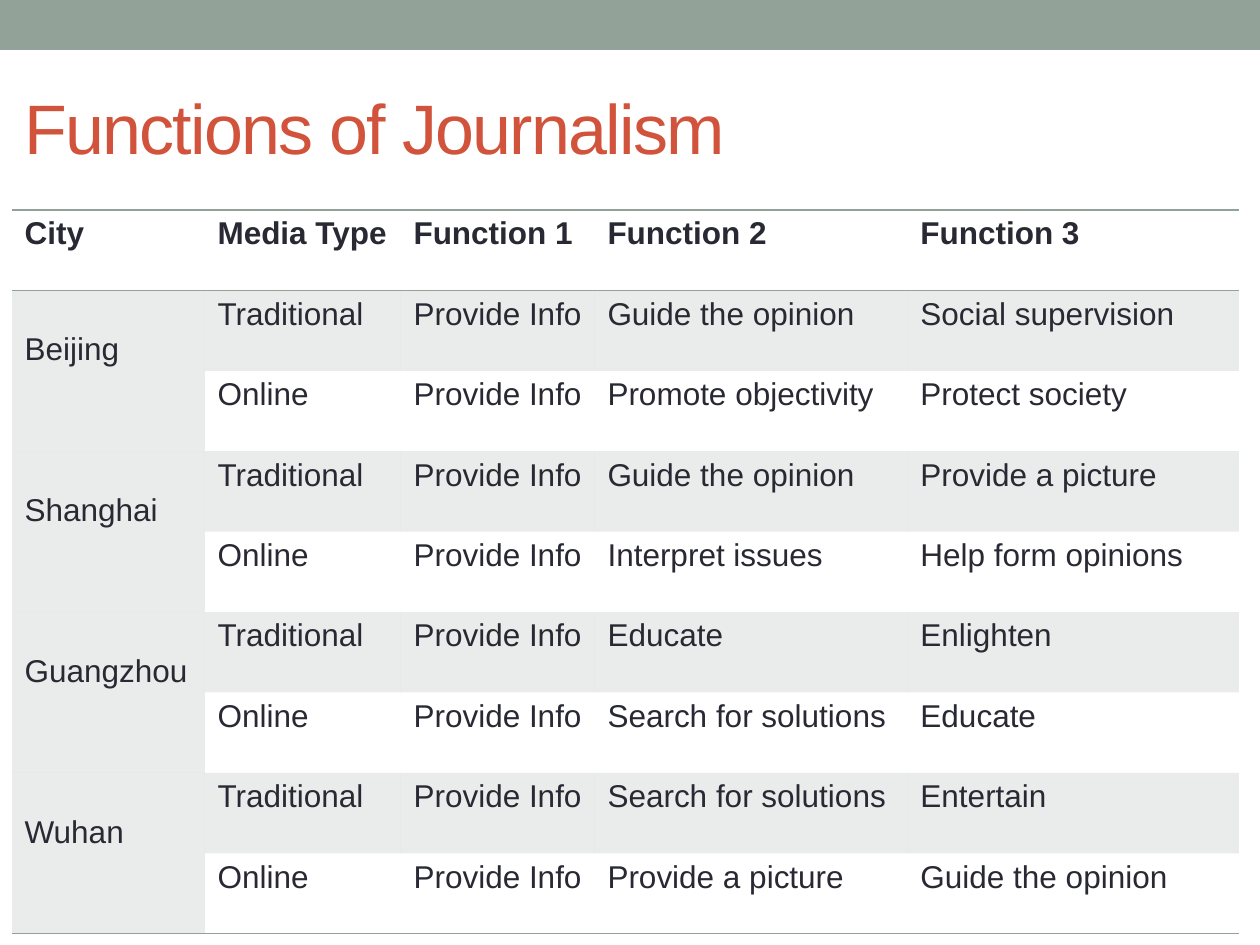
from lxml import etree
from pptx import Presentation
from pptx.dml.color import RGBColor
from pptx.enum.shapes import MSO_SHAPE
from pptx.enum.text import MSO_ANCHOR
from pptx.oxml.ns import qn
from pptx.util import Emu, Pt

RECTANGLE = MSO_SHAPE.RECTANGLE
MIDDLE = MSO_ANCHOR.MIDDLE
SAGE = RGBColor(0x93, 0xA2, 0x99)
RUST = RGBColor(0xD2, 0x53, 0x3C)
INK = RGBColor(0x29, 0x29, 0x34)
FONT = "Arial"
NO_STYLE_NO_GRID = "{2D5ABB26-0587-4C30-8999-92F81FD0307C}"

HEADER = ["City", "Media Type", "Function 1", "Function 2", "Function 3"]
CITIES = ["Beijing", "Shanghai", "Guangzhou", "Wuhan"]
MEDIA_TYPES = ["Traditional", "Online"]
LATER_FUNCTIONS = [
    ["Guide the opinion", "Social supervision"],
    ["Promote objectivity", "Protect society"],
    ["Guide the opinion", "Provide a picture"],
    ["Interpret issues", "Help form opinions"],
    ["Educate", "Enlighten"],
    ["Search for solutions", "Educate"],
    ["Search for solutions", "Entertain"],
    ["Provide a picture", "Guide the opinion"],
]
COLUMN_WIDTHS = [193, 196, 194, 313, 331]
TABLE_HEIGHT = 724
CITY_TOP_MARGIN = 42  # one blank line above the city name


def px(length):
    return Emu(round(length * 914400 / 126))


def add_run(paragraph, text, size, color, bold=False):
    run = paragraph.add_run()
    run.text = text
    run.font.name = FONT
    run.font.size = Pt(size)
    run.font.bold = bold
    run.font.color.rgb = color
    return run


presentation = Presentation()
presentation.slide_width = px(1260)
presentation.slide_height = px(945)
slide = presentation.slides.add_slide(presentation.slide_layouts[6])

# Top band
band = slide.shapes.add_shape(RECTANGLE, px(0), px(0), px(1260), px(50))
band.shadow.inherit = False
band.fill.solid()
band.fill.fore_color.rgb = SAGE
band.line.fill.background()

# Title
title = slide.shapes.add_textbox(px(12), px(59), px(1134), px(136))
title.text_frame.word_wrap = True
title.text_frame.vertical_anchor = MIDDLE
title_run = add_run(title.text_frame.paragraphs[0], "Functions of Journalism", 40, RUST)
title_run.font._element.set("spc", "-100")

# Table grid
rows = [HEADER]
for index, functions in enumerate(LATER_FUNCTIONS):
    city = CITIES[index // 2] if index % 2 == 0 else ""
    rows.append([city, MEDIA_TYPES[index % 2], "Provide Info"] + functions)

table = slide.shapes.add_table(
    len(rows), len(HEADER), px(12), px(210), px(sum(COLUMN_WIDTHS)), px(TABLE_HEIGHT)
).table
table.horz_banding = False
table._tbl.tblPr.find(qn("a:tableStyleId")).text = NO_STYLE_NO_GRID
for column, width in zip(table.columns, COLUMN_WIDTHS):
    column.width = px(width)
for row in table.rows:
    row.height = px(TABLE_HEIGHT / len(rows))

# Cells: text, rules, then band fill
last_row = len(rows) - 1
for row_index, texts in enumerate(rows):
    for column_index, text in enumerate(texts):
        cell = table.cell(row_index, column_index)
        is_header = row_index == 0
        is_city = column_index == 0 and not is_header
        if text:
            add_run(cell.text_frame.paragraphs[0], text, 18, INK, is_header)
        if is_city:
            cell.margin_top = px(CITY_TOP_MARGIN)

        edges = []
        if is_header:
            edges = ["a:lnT", "a:lnB"]
        elif row_index == last_row or (is_city and row_index == last_row - 1):
            edges = ["a:lnB"]
        properties = cell._tc.get_or_add_tcPr()
        for edge in edges:
            line = etree.SubElement(properties, qn(edge), w=str(Pt(1)))
            line_fill = etree.SubElement(line, qn("a:solidFill"))
            etree.SubElement(line_fill, qn("a:srgbClr"), val=str(SAGE))

        if is_city or row_index % 2 == 1:
            cell.fill.solid()
            cell.fill.fore_color.rgb = SAGE
            fill_color = properties.find(qn("a:solidFill")).find(qn("a:srgbClr"))
            etree.SubElement(fill_color, qn("a:alpha"), val="20000")
        else:
            cell.fill.background()

# Each city spans its two media types
for first_row in range(1, len(rows), 2):
    table.cell(first_row, 0).merge(table.cell(first_row + 1, 0))

presentation.save("out.pptx")
